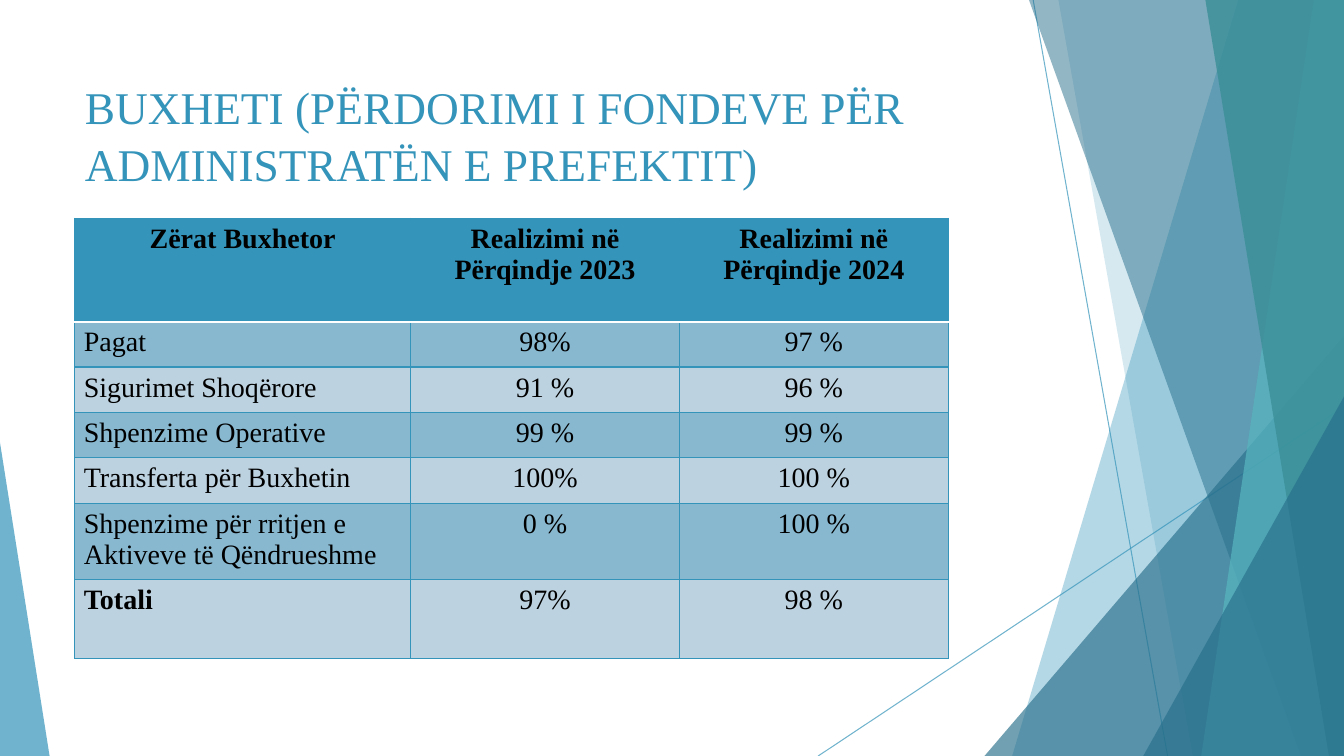
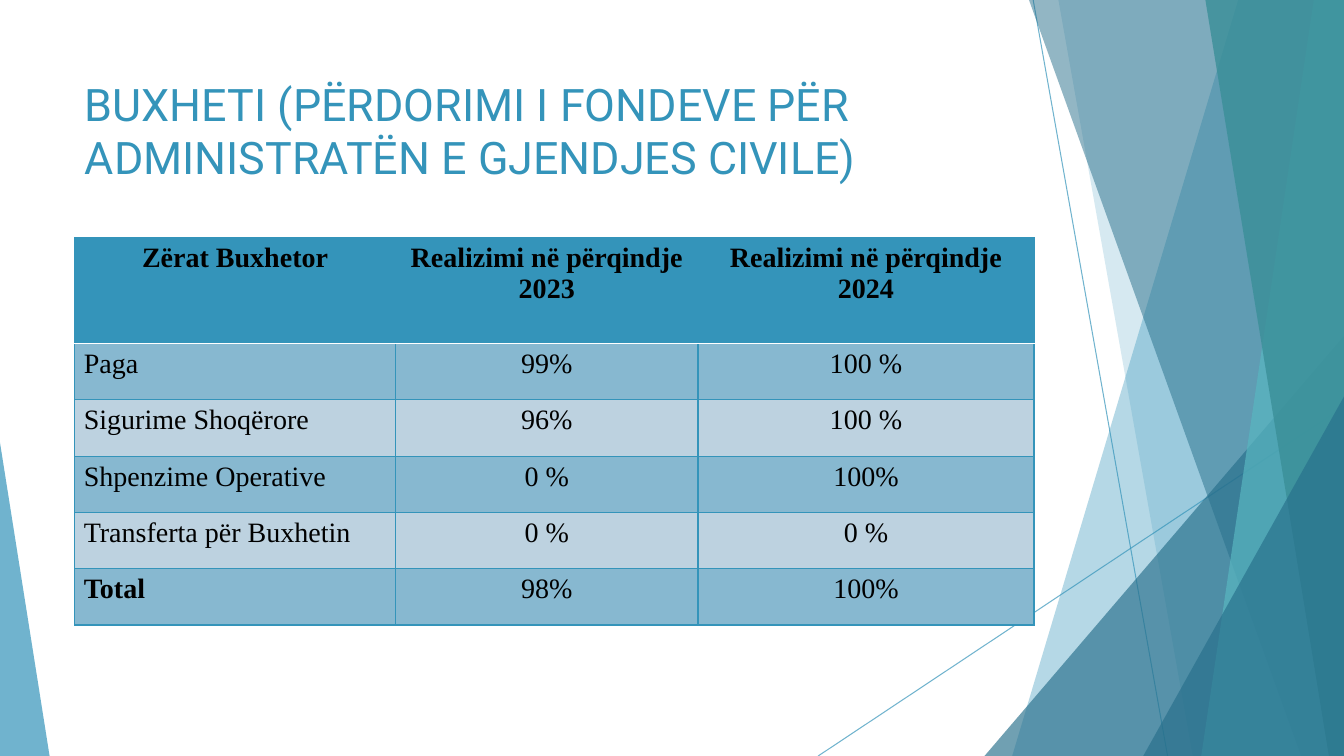
import pptx
import pptx.util
import pptx.dml.color
import pptx.enum.dml
import pptx.enum.shapes
import pptx.enum.text
import pptx.oxml
import pptx.oxml.ns
from lxml import etree

GRID_COLUMNS, GRID_ROWS = 16, 9
SLIDE_WIDTH, SLIDE_HEIGHT = pptx.util.Inches(13.33), pptx.util.Inches(7.5)
WHOLE_SLIDE = (0, 0, GRID_COLUMNS, GRID_ROWS)
TITLE_BOX = (0.89, 0.8, 11.28, 1.73)
COLOURS = {
    "blue": "3494BA",
    "deep": "276F8B",
    "aqua": "58B6C0",
    "teal": "3A8F98",
    "odd_row": "87B8D0",
    "even_row": "BDD2E0",
    "white": "FFFFFF",
    "black": "000000",
}
TITLE_FRAME = {
    "auto_size": pptx.enum.text.MSO_AUTO_SIZE.NONE,
    "vertical_anchor": pptx.enum.text.MSO_ANCHOR.TOP,
    "word_wrap": True,
    "margin_top": pptx.util.Inches(0.09),
}
CELL_MARGINS = {
    "margin_left": pptx.util.Inches(0.09),
    "margin_right": pptx.util.Inches(0.09),
    "margin_top": pptx.util.Inches(0.05),
    "margin_bottom": pptx.util.Inches(0.05),
}
CELL_FONT = {"name": "Times New Roman", "size": pptx.util.Pt(20)}
LEFT, CENTER = pptx.enum.text.PP_ALIGN.LEFT, pptx.enum.text.PP_ALIGN.CENTER

BUDGETS = [
    {
        "title": "BUXHETI (PËRDORIMI I FONDEVE PËR ADMINISTRATËN E PREFEKTIT)",
        "font": {"name": "Times New Roman", "size": pptx.util.Pt(32.4)},
        "spacing": 1.05,
        "origin": (0.89, 2.6),
        "columns": [4, 3.2, 3.2],
        "rows": [1.23] + [0.54] * 4 + [0.91, 0.94],
        "entries": [
            ("Zërat Buxhetor", "Realizimi në Përqindje 2023", "Realizimi në Përqindje 2024"),
            ("Pagat", "98%", "97 %"),
            ("Sigurimet Shoqërore", "91 %", "96 %"),
            ("Shpenzime Operative", "99 %", "99 %"),
            ("Transferta për Buxhetin", "100%", "100 %"),
            ("Shpenzime për rritjen e Aktiveve të Qëndrueshme", "0 %", "100 %"),
            ("Totali", "97%", "98 %"),
        ],
    },
    {
        "title": "BUXHETI (PËRDORIMI I FONDEVE PËR ADMINISTRATËN E GJENDJES CIVILE)",
        "font": {"name": "Roboto", "size": pptx.util.Pt(32)},
        "spacing": 1.0,
        "origin": (0.89, 2.83),
        "columns": [3.82, 3.6, 4],
        "rows": [1.26] + [0.67] * 5,
        "entries": [
            ("Zërat Buxhetor", "Realizimi në përqindje\n2023", "Realizimi në përqindje\n2024"),
            ("Paga", "99%", "100 %"),
            ("Sigurime Shoqërore", "96%", "100 %"),
            ("Shpenzime Operative", "0 %", "100%"),
            ("Transferta për Buxhetin", "0 %", "0 %"),
            ("Total", "98%", "100%"),
        ],
    },
]


def across(columns):
    return round(columns * SLIDE_WIDTH / GRID_COLUMNS)


def down(rows):
    return round(rows * SLIDE_HEIGHT / GRID_ROWS)


def place(box):
    left, top, width, height = box
    return across(left), down(top), across(width), down(height)


def colour(name):
    return pptx.dml.color.RGBColor.from_string(COLOURS[name])


def apply(target, formats):
    for attribute, value in formats.items():
        setattr(target, attribute, value)


def set_opacity(shape, percent):
    for tone in shape.element.xpath("./p:spPr//a:srgbClr"):
        alpha = etree.SubElement(tone, pptx.oxml.ns.qn("a:alpha"))
        alpha.set("val", str(percent * 1000))


def paint(shape, name, percent):
    shape.shadow.inherit = False
    shape.fill.solid()
    shape.fill.fore_color.rgb = colour(name)
    shape.line.fill.background()
    set_opacity(shape, percent)


def add_ray(shapes, start, end):
    ray = shapes.add_connector(
        pptx.enum.shapes.MSO_CONNECTOR.STRAIGHT,
        across(start[0]), down(start[1]), across(end[0]), down(end[1]))
    ray.line.width = pptx.util.Pt(0.75)
    ray.line.color.rgb = colour("blue")
    set_opacity(ray, 70)
    etree.SubElement(ray.element.spPr, pptx.oxml.ns.qn("a:effectLst"))


def add_facet(shapes, box, top_x, bottom_x, name, percent):
    left, top, width, height = box
    right, bottom = left + width, top + height
    corners = [(left + top_x, top), (right, top), (right, bottom), (left + bottom_x, bottom)]
    points = [(across(x), down(y)) for x, y in corners]
    outline = shapes.build_freeform(*points[0])
    outline.add_line_segments(points[1:], close=True)
    paint(outline.convert_to_shape(), name, percent)


def add_corner(shapes, box, apex, name, percent):
    corner = shapes.add_shape(pptx.enum.shapes.MSO_SHAPE.ISOSCELES_TRIANGLE, *place(box))
    corner.adjustments[0] = apex
    paint(corner, name, percent)


def add_backdrop(shapes, box):
    left, top, width, height = box
    right, bottom = left + width, top + height
    add_ray(shapes, (left + 12.3, top), (left + 13.9, bottom))
    add_ray(shapes, (right, top + 4.84), (left + 9.74, bottom))
    add_facet(shapes, box, 14.74, 12.05, "blue", 36)
    add_facet(shapes, box, 12.6, 14.2, "blue", 20)
    add_corner(shapes, (right - 4.28, bottom - 5, 4.28, 5), 1, "deep", 66)
    add_facet(shapes, box, 12.25, 15.49, "deep", 50)
    add_facet(shapes, box, 15.64, 14.3, "aqua", 70)
    add_facet(shapes, box, 14.35, 15.82, "teal", 80)
    add_corner(shapes, (right - 2.39, bottom - 4.28, 2.39, 4.28), 1, "deep", 66)
    add_corner(shapes, (left, bottom - 3.73, 0.59, 3.73), 0, "blue", 70)


def share_backdrop(slide, layout):
    existing = {shape.shape_id for shape in slide.shapes}
    add_backdrop(slide.shapes, WHOLE_SLIDE)
    facets = [shape for shape in slide.shapes if shape.shape_id not in existing]
    for number, facet in enumerate(facets):
        facet.element.xpath(".//p:cNvPr")[0].set("id", str(100 + number))
        layout.shapes.element.insert(2 + number, facet.element)


def fill_title(title, budget):
    title.text_frame.text = budget["title"]
    apply(title.text_frame, TITLE_FRAME)
    heading = title.text_frame.paragraphs[0]
    apply(heading, {"alignment": LEFT, "line_spacing": budget["spacing"]})
    apply(heading.font, budget["font"])
    heading.font.color.rgb = colour("blue")


def set_borders(cell, edges):
    properties = cell._tc.get_or_add_tcPr()
    for position, (edge, (name, points)) in enumerate(edges.items()):
        border = pptx.oxml.parse_xml(
            f'<a:{edge} {pptx.oxml.ns.nsdecls("a")} w="{pptx.util.Pt(points)}">'
            f'<a:solidFill><a:srgbClr val="{COLOURS[name]}"/></a:solidFill></a:{edge}>')
        properties.insert(position, border)


def fill_cell(cell, entry, row, column, last_row):
    header = row == 0
    cell.text = entry
    apply(cell, CELL_MARGINS)
    cell.fill.solid()
    cell.fill.fore_color.rgb = colour("blue" if header else "odd_row" if row % 2 else "even_row")
    for paragraph in cell.text_frame.paragraphs:
        paragraph.alignment = CENTER if header or column else LEFT
        apply(paragraph.font, CELL_FONT)
        paragraph.font.bold = header or (row == last_row and column == 0)
        paragraph.font.color.rgb = colour("black")
    thin, divider = ("blue", 1), ("white", 1.5)
    set_borders(cell, {
        "lnL": thin,
        "lnR": thin,
        "lnT": divider if row == 1 else thin,
        "lnB": divider if header else thin,
    })


def add_budget_table(slide, origin, budget):
    columns, rows, entries = budget["columns"], budget["rows"], budget["entries"]
    box = (*origin, sum(columns), sum(rows))
    table = slide.shapes.add_table(len(rows), len(columns), *place(box)).table
    for column, width in zip(table.columns, columns):
        column.width = across(width)
    for row, height in zip(table.rows, rows):
        row.height = down(height)
    for row, line in enumerate(entries):
        for column, entry in enumerate(line):
            fill_cell(table.cell(row, column), entry, row, column, len(rows) - 1)


def add_budget_slide(deck, layout, budget):
    slide = deck.slides.add_slide(layout)
    fill_title(slide.shapes.title, budget)
    add_budget_table(slide, budget["origin"], budget)
    return slide


def main():
    deck = pptx.Presentation()
    apply(deck, {"slide_width": SLIDE_WIDTH, "slide_height": SLIDE_HEIGHT})
    layout = deck.slide_layouts[5]
    title_area = layout.placeholders[0]
    apply(title_area, dict(zip(("left", "top", "width", "height"), place(TITLE_BOX))))
    slides = [add_budget_slide(deck, layout, budget) for budget in BUDGETS]
    share_backdrop(slides[0], layout)
    deck.save("out.pptx")


if __name__ == "__main__":
    main()
